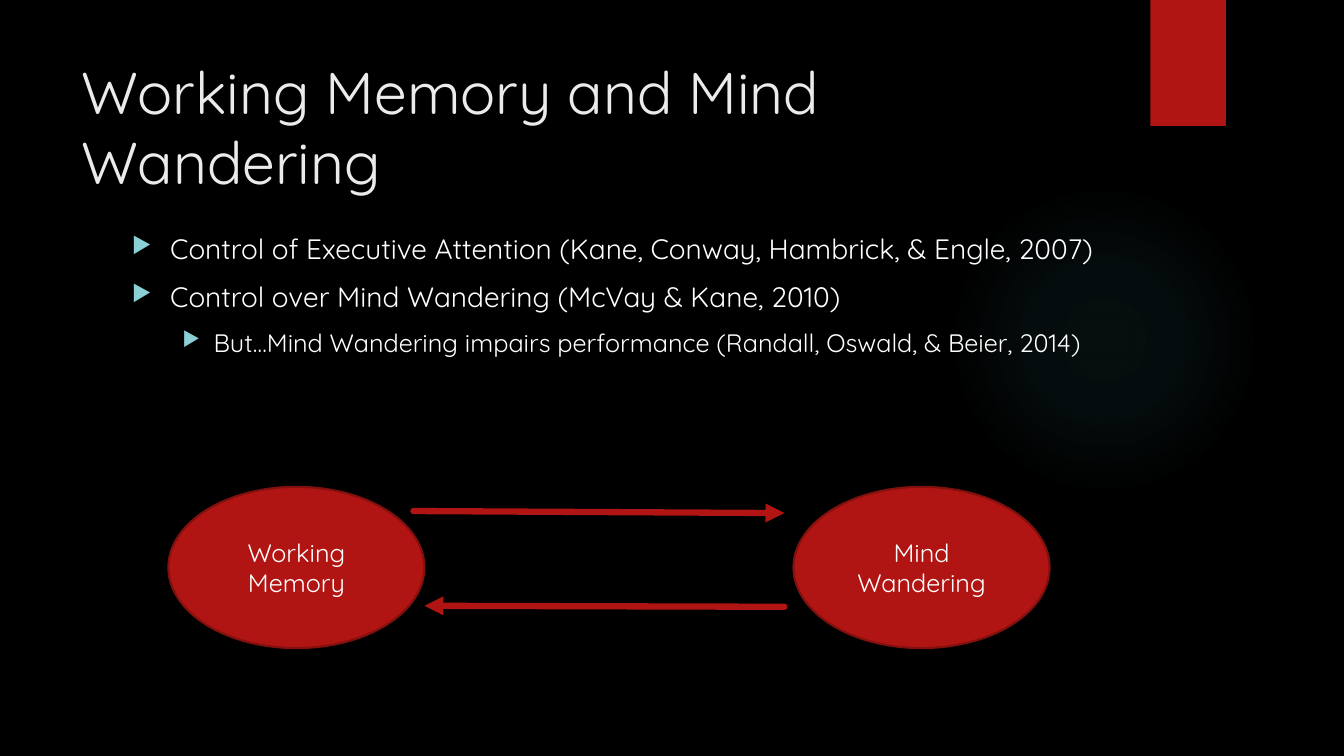
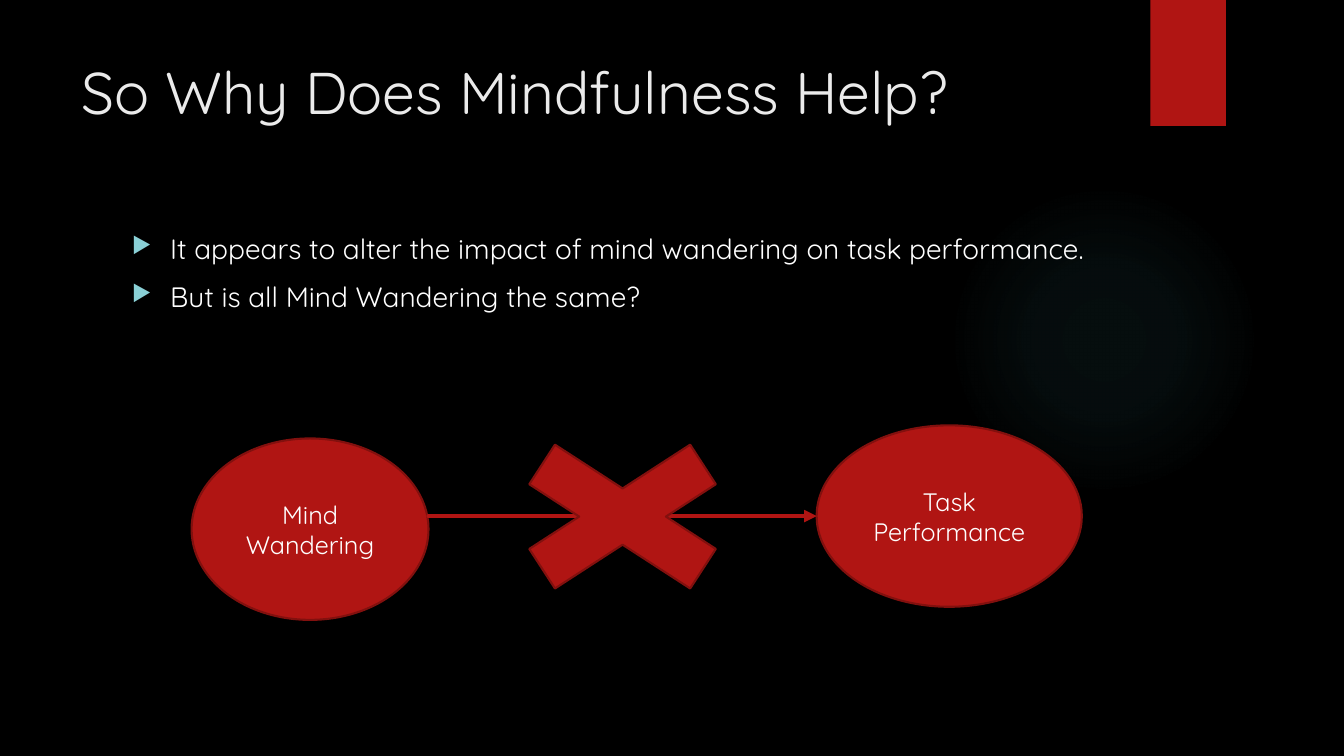
import dataclasses

import pptx
import pptx.dml.color
import pptx.enum.shapes
import pptx.enum.text
import pptx.oxml
import pptx.oxml.ns
import pptx.presentation
import pptx.shapes.autoshape
import pptx.slide
import pptx.text.text
import pptx.util

EMU_PER_PX = 9144  # 100 px to the inch
FONT = "Quicksand"
BLACK = "000000"
WHITE = "FFFFFF"
TITLE_COLOR = "EBEBEB"
RED = "B01513"
DARK_RED = "82100E"
BULLET_COLOR = "8AD0D6"
GLOW_COLOR = "50B9C1"
GLOW_STOPS = ((0, 7), (36, 6), (69, 0))  # position and opacity, percent
BULLET_INDENTS = ((38, -38), (81, -31))  # left margin and first line, by level
BULLET_SIZES = (20, 18)

SHAPES = pptx.enum.shapes.MSO_SHAPE
ALIGN = pptx.enum.text.PP_ALIGN
ANCHOR = pptx.enum.text.MSO_ANCHOR


@dataclasses.dataclass(frozen=True)
class Box:
    left: int
    top: int
    width: int
    height: int


@dataclasses.dataclass(frozen=True)
class Bullet:
    text: str
    level: int = 0


@dataclasses.dataclass(frozen=True)
class Node:
    box: Box
    text: str = ""
    preset: SHAPES = SHAPES.OVAL


@dataclasses.dataclass(frozen=True)
class Arrow:
    start: tuple[int, int]
    end: tuple[int, int]
    weight: float


@dataclasses.dataclass(frozen=True)
class Page:
    title: str
    bullets: tuple[Bullet, ...]
    diagram: tuple[Node | Arrow, ...]


GLOW = Box(941, 183, 308, 308)
RIBBON = Box(1141, 0, 75, 125)
TITLE = Box(71, 50, 1029, 153)
BODY = Box(121, 225, 978, 459)

PAGES = (
    Page(
        "Working Memory and Mind Wandering",
        (
            Bullet("Control of Executive Attention (Kane, Conway, Hambrick, & Engle, 2007)"),
            Bullet("Control over Mind Wandering (McVay & Kane, 2010)"),
            Bullet("But…Mind Wandering impairs performance (Randall, Oswald, & Beier, 2014)", 1),
        ),
        (
            Node(Box(167, 483, 254, 160), "Working Memory"),
            Node(Box(787, 483, 254, 160), "Mind Wandering"),
            Arrow((410, 507), (778, 509), 4.5),
            Arrow((778, 602), (421, 601), 4.5),
        ),
    ),
    Page(
        "So Why Does Mindfulness Help?",
        (
            Bullet("It appears to alter the impact of mind wandering on task performance."),
            Bullet("But is all Mind Wandering the same?"),
        ),
        (
            Node(Box(810, 422, 263, 180), "Task Performance"),
            Node(Box(190, 435, 235, 180), "Mind Wandering"),
            Arrow((425, 512), (810, 512), 3),
            Node(Box(464, 413, 307, 199), preset=SHAPES.MATH_MULTIPLY),
        ),
    ),
)


def px(length: int) -> pptx.util.Emu:
    return pptx.util.Emu(length * EMU_PER_PX)


def rgb(color: str) -> pptx.dml.color.RGBColor:
    return pptx.dml.color.RGBColor.from_string(color)


def bounds(box: Box) -> tuple[pptx.util.Emu, ...]:
    return px(box.left), px(box.top), px(box.width), px(box.height)


def element(xml: str):
    """Parse one drawing element, adding the namespace to its tag."""
    tag, rest = xml[1:].split(" ", 1)
    return pptx.oxml.parse_xml(f'<{tag} {pptx.oxml.ns.nsdecls("a")} {rest}')


def set_font(paragraph: pptx.text.text._Paragraph, size: int, color: str) -> None:
    paragraph.font.name = FONT
    paragraph.font.size = pptx.util.Pt(size)
    paragraph.font.color.rgb = rgb(color)


def add_red_shape(
    slide: pptx.slide.Slide, preset: SHAPES, box: Box
) -> pptx.shapes.autoshape.Shape:
    shape = slide.shapes.add_shape(preset, *bounds(box))
    shape.shadow.inherit = False
    shape.fill.solid()
    shape.fill.fore_color.rgb = rgb(RED)
    shape.line.fill.background()
    return shape


def add_glow(slide: pptx.slide.Slide) -> None:
    shape = add_red_shape(slide, SHAPES.OVAL, GLOW)
    stops = "".join(
        f'<a:gs pos="{position * 1000}"><a:srgbClr val="{GLOW_COLOR}">'
        f'<a:alpha val="{opacity * 1000}"/></a:srgbClr></a:gs>'
        for position, opacity in GLOW_STOPS
    )
    gradient = element(
        f'<a:gradFill rotWithShape="1"><a:gsLst>{stops}</a:gsLst><a:path path="circle">'
        '<a:fillToRect l="50000" t="50000" r="50000" b="50000"/></a:path></a:gradFill>'
    )
    properties = shape.element.spPr
    properties.replace(properties.find(pptx.oxml.ns.qn("a:solidFill")), gradient)


def add_text_frame(slide: pptx.slide.Slide, box: Box) -> pptx.text.text.TextFrame:
    frame = slide.shapes.add_textbox(*bounds(box)).text_frame
    frame.word_wrap = True
    return frame


def add_title(slide: pptx.slide.Slide, text: str) -> None:
    paragraph = add_text_frame(slide, TITLE).paragraphs[0]
    paragraph.text = text
    set_font(paragraph, 42, TITLE_COLOR)


def add_bullets(slide: pptx.slide.Slide, bullets: tuple[Bullet, ...]) -> None:
    frame = add_text_frame(slide, BODY)
    for index, bullet in enumerate(bullets):
        paragraph = frame.add_paragraph() if index else frame.paragraphs[0]
        paragraph.text = bullet.text
        paragraph.level = bullet.level
        if index:
            paragraph.space_before = pptx.util.Pt(10)
        margin, indent = BULLET_INDENTS[bullet.level]
        properties = paragraph._p.get_or_add_pPr()
        properties.set("marL", str(px(margin)))
        properties.set("indent", str(px(indent)))
        for xml in (
            f'<a:buClr ><a:srgbClr val="{BULLET_COLOR}"/></a:buClr>',
            '<a:buSzPct val="80000"/>',
            '<a:buChar char="▶"/>',
        ):
            properties.append(element(xml))
        set_font(paragraph, BULLET_SIZES[bullet.level], WHITE)


def add_node(slide: pptx.slide.Slide, node: Node) -> None:
    shape = add_red_shape(slide, node.preset, node.box)
    shape.line.color.rgb = rgb(DARK_RED)
    shape.line.width = pptx.util.Pt(1.5)
    if node.text:
        frame = shape.text_frame
        frame.word_wrap = True
        frame.vertical_anchor = ANCHOR.MIDDLE
        paragraph = frame.paragraphs[0]
        paragraph.text = node.text
        paragraph.alignment = ALIGN.CENTER
        set_font(paragraph, 18, WHITE)


def add_arrow(slide: pptx.slide.Slide, arrow: Arrow) -> None:
    ends = (px(value) for value in arrow.start + arrow.end)
    connector = slide.shapes.add_connector(pptx.enum.shapes.MSO_CONNECTOR.STRAIGHT, *ends)
    connector.line.color.rgb = rgb(RED)
    connector.line.width = pptx.util.Pt(arrow.weight)
    properties = connector._element.spPr
    line = properties.find(pptx.oxml.ns.qn("a:ln"))
    line.set("cap", "rnd")
    line.append(element('<a:tailEnd type="triangle"/>'))
    properties.append(element("<a:effectLst />"))


def add_page(presentation: pptx.presentation.Presentation, page: Page) -> None:
    slide = presentation.slides.add_slide(presentation.slide_layouts[6])
    slide.background.fill.solid()
    slide.background.fill.fore_color.rgb = rgb(BLACK)
    add_glow(slide)
    add_red_shape(slide, SHAPES.RECTANGLE, RIBBON)
    add_title(slide, page.title)
    add_bullets(slide, page.bullets)
    for item in page.diagram:
        if isinstance(item, Node):
            add_node(slide, item)
        else:
            add_arrow(slide, item)


def main() -> None:
    presentation = pptx.Presentation()
    presentation.slide_width = px(1333)
    presentation.slide_height = px(750)
    for page in PAGES:
        add_page(presentation, page)
    presentation.save("out.pptx")


if __name__ == "__main__":
    main()
